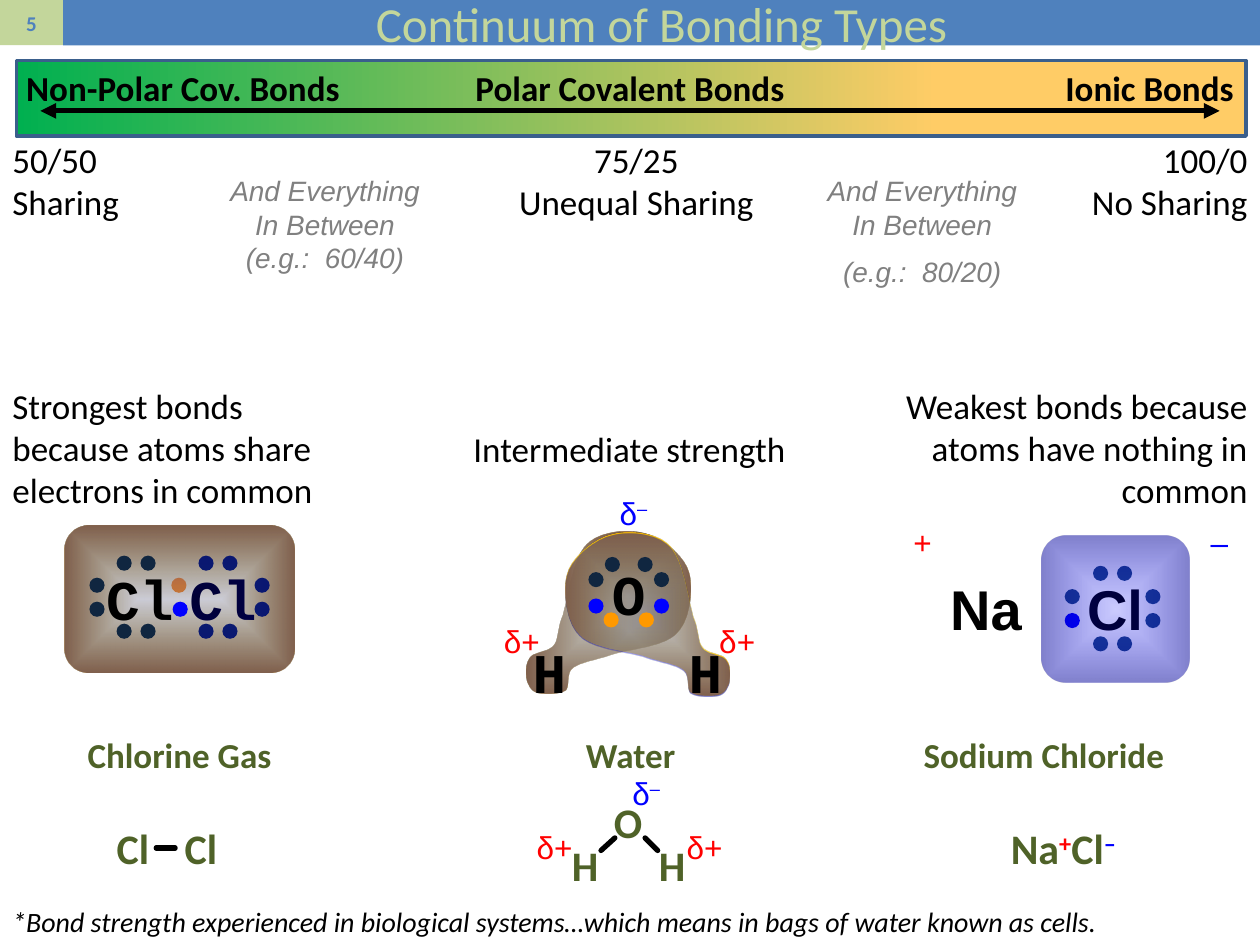
from lxml import etree
from pptx import Presentation
from pptx.dml.color import RGBColor
from pptx.enum.shapes import MSO_CONNECTOR, MSO_SHAPE
from pptx.enum.text import MSO_ANCHOR, MSO_AUTO_SIZE, PP_ALIGN
from pptx.oxml.ns import qn
from pptx.util import Inches, Pt

LEFT, CENTER, RIGHT = PP_ALIGN.LEFT, PP_ALIGN.CENTER, PP_ALIGN.RIGHT
MIDDLE = MSO_ANCHOR.MIDDLE
GROW = MSO_AUTO_SIZE.SHAPE_TO_FIT_TEXT
RECT, ROUNDED, OVAL = MSO_SHAPE.RECTANGLE, MSO_SHAPE.ROUNDED_RECTANGLE, MSO_SHAPE.OVAL
STRAIGHT = MSO_CONNECTOR.STRAIGHT

WIDTH, HEIGHT = 10, 7.5
HEADER_H = 0.36
DOT, PAIR_GAP = 0.12, 0.19
MIRROR_SUM = 9.97  # left x + right x of the two water lobes
CHARGE_WIDTHS = {"δ+": 0.49, "δ–": 0.43, "+": 0.35, "–": 0.34}

COLORS = {
    "black": "000000", "header": "4F81BD", "pale": "C3D69B", "border": "3A5F8C",
    "covalent": "00B050", "ionic": "FFCC66", "formula": "4F6228", "grey": "808080",
    "plus": "FF0000", "minus": "0000FF", "electron": "102640",
    "chloride": "1F497D", "shared": "FF9900",
}
# Gradient stops: position, colour, opacity (all but colour in percent)
SPECTRUM = [(0, COLORS["covalent"], 100), (75, COLORS["ionic"], 100)]
YELLOW_CLOUD = [(0, "FFFF00", 20), (100, "FFC000", 100)]
BLUE_CLOUD = [(0, "0000FF", 20), (100, "000099", 50)]

# Left half of the water cloud: bounds, a start point and Bézier segments
LOBE_CORNERS = (4.18, 4.22), (5.48, 5.51)
LOBE_START = (4.28, 5.5)
LOBE_CURVES = [
    (4.33, 5.51, 4.44, 5.51, 4.49, 5.48), (4.53, 5.45, 4.49, 5.35, 4.55, 5.3),
    (4.62, 5.25, 4.73, 5.24, 4.87, 5.19), (5.01, 5.15, 5.28, 5.13, 5.37, 5.02),
    (5.47, 4.92, 5.5, 4.67, 5.46, 4.54), (5.42, 4.41, 5.26, 4.28, 5.13, 4.24),
    (5, 4.2, 4.77, 4.21, 4.66, 4.32), (4.55, 4.42, 4.51, 4.74, 4.47, 4.88),
    (4.42, 5.01, 4.44, 5.06, 4.4, 5.12), (4.35, 5.18, 4.24, 5.17, 4.21, 5.22),
    (4.17, 5.27, 4.18, 5.37, 4.19, 5.41), (4.21, 5.46, 4.23, 5.49, 4.28, 5.5),
]


def rgb(name):
    return RGBColor.from_string(COLORS[name])


def style(font, size, color, face="Calibri", bold=False, italic=False):
    font.size, font.name, font.bold, font.italic = Pt(size), face, bold, italic
    font.color.rgb = rgb(color)


def add_label(slide, text, box, size=20, color="black", align=LEFT, wrap=True, **look):
    """Text box; each line of text is a paragraph, and \\v breaks a line."""
    label = slide.shapes.add_textbox(*map(Inches, box))
    frame = label.text_frame
    frame.word_wrap = wrap
    frame.auto_size = GROW
    frame.text = text
    for index, paragraph in enumerate(frame.paragraphs):
        paragraph.alignment = align
        style(paragraph.font, size, color, **look)
        if index:
            paragraph.space_before = Pt(size / 2)
    return frame


def add_superscript(paragraph, text):
    run = paragraph.add_run()
    run.text = text
    run._r.get_or_add_rPr().set("baseline", "30000")
    return run


def add_charge(slide, text, x, y):
    """Full or partial charge, coloured by its sign."""
    color = "plus" if text.endswith("+") else "minus"
    base, raised = ("δ", "–") if text == "δ–" else (text, "")
    frame = add_label(slide, base, (x, y, CHARGE_WIDTHS[text], 0.4), 18, color,
                      wrap=False, face="Arial")
    if raised:
        add_superscript(frame.paragraphs[0], raised)


def add_symbol(slide, text, x, y, face="Courier New", width=0.74):
    add_label(slide, text, (x, y, width, 0.63), 32, align=CENTER, face=face, bold=True)


def add_block(slide, kind, box, color=None):
    block = slide.shapes.add_shape(kind, *map(Inches, box))
    block.shadow.inherit = False
    block.line.fill.background()
    if color:
        block.fill.solid()
        block.fill.fore_color.rgb = rgb(color)
    return block


def set_gradient(shape, stops, from_center=True):
    fill = etree.Element(qn("a:gradFill"), rotWithShape="1")
    stop_list = etree.SubElement(fill, qn("a:gsLst"))
    for position, color, opacity in stops:
        stop = etree.SubElement(stop_list, qn("a:gs"), pos=str(position * 1000))
        shade = etree.SubElement(stop, qn("a:srgbClr"), val=color)
        if opacity < 100:
            etree.SubElement(shade, qn("a:alpha"), val=str(opacity * 1000))
    if from_center:
        path = etree.SubElement(fill, qn("a:path"), path="shape")
        etree.SubElement(path, qn("a:fillToRect"), dict.fromkeys("ltrb", "50000"))
    else:
        etree.SubElement(fill, qn("a:lin"), ang="0", scaled="0")
    shape._element.spPr.find(qn("a:ln")).addprevious(fill)


def add_cloud(slide, box, stops):
    set_gradient(add_block(slide, ROUNDED, box), stops)


def add_lobe(slide, stops, mirrored=False, drop=0):
    """Half of the water cloud, as a closed outline of Bézier curves."""
    def place(x, y):
        return Inches(MIRROR_SUM - x if mirrored else x), Inches(y + drop)

    first, last = (place(*corner) for corner in LOBE_CORNERS)
    builder = slide.shapes.build_freeform(*first, scale=1.0)
    builder.add_line_segments([last], close=True)
    lobe = builder.convert_to_shape()
    lobe.shadow.inherit = False
    lobe.line.fill.background()
    set_gradient(lobe, stops)

    outline = next(lobe._element.iter(qn("a:path")))
    for child in list(outline):
        outline.remove(child)
    for tag, coords in [("a:moveTo", LOBE_START)] + [("a:cubicBezTo", c) for c in LOBE_CURVES]:
        segment = etree.SubElement(outline, qn(tag))
        for point in zip(coords[::2], coords[1::2]):
            x, y = place(*point)
            etree.SubElement(segment, qn("a:pt"), x=str(x - lobe.left), y=str(y - lobe.top))
    etree.SubElement(outline, qn("a:close"))


def add_electron(slide, cx, cy, color="electron"):
    add_block(slide, OVAL, (cx - DOT / 2, cy - DOT / 2, DOT, DOT), color)


def add_octet(slide, cx, cy, rx, ry, color, shift=0, **sides):
    """Four electron pairs; sides recolours a side's (upper, lower) dots, None skips.

    shift moves the upper and lower pairs sideways.
    """
    half_gap = PAIR_GAP / 2
    for side, sign in (("left", -1), ("right", 1)):
        for offset, dot_color in zip((-half_gap, half_gap), sides.get(side, (color, color))):
            if dot_color:
                add_electron(slide, cx + sign * rx, cy + offset, dot_color)
            add_electron(slide, cx + shift + offset, cy + sign * ry, color)


def add_line(slide, start, end, arrows=False):
    line = slide.shapes.add_connector(STRAIGHT, *map(Inches, start + end))
    line.line.color.rgb = rgb("black")
    line.line.width = Pt(3)
    stroke = line.line._get_or_add_ln()
    if arrows:
        for tip in ("a:headEnd", "a:tailEnd"):
            etree.SubElement(stroke, qn(tip), type="triangle")
    else:
        stroke.set("cap", "rnd")
    etree.SubElement(line._element.spPr, qn("a:effectLst"))


def add_header(slide):
    number = add_block(slide, RECT, (0, 0, 0.5, HEADER_H), "pale").text_frame
    title = slide.shapes.title
    title.left, title.top, title.width, title.height = map(Inches, (0.5, 0, 9.5, HEADER_H))
    title.fill.solid()
    title.fill.fore_color.rgb = rgb("header")
    for frame, text, size, color, bold in (
            (number, "5", 12, "header", True),
            (title.text_frame, "Continuum of Bonding Types", 28, "pale", False)):
        frame.text = text
        frame.vertical_anchor = MIDDLE
        frame.paragraphs[0].alignment = CENTER
        style(frame.paragraphs[0].font, size, color, bold=bold)


def add_spectrum(slide):
    bar = add_block(slide, RECT, (0.13, 0.48, 9.76, 0.6))
    set_gradient(bar, SPECTRUM, from_center=False)
    bar.line.color.rgb = rgb("border")
    bar.line.width = Pt(2)
    for text, x, width, align in (("Non-Polar Cov. Bonds", 0.11, 2.73, LEFT),
                                  ("Polar Covalent Bonds", 3.55, 2.9, CENTER),
                                  ("Ionic Bonds", 6.99, 2.9, RIGHT)):
        add_label(slide, text, (x, 0.48, width, 0.44), align=align, bold=True)
    add_line(slide, (0.32, 0.88), (9.68, 0.88), arrows=True)


def add_descriptions(slide):
    for text, box, align in (
            ("50/50 Sharing", (0, 1.05, 1.56, 0.77), LEFT),
            ("75/25\vUnequal Sharing", (3.34, 1.05, 3.42, 0.77), CENTER),
            ("100/0\vNo Sharing", (8.54, 1.05, 1.46, 0.77), RIGHT),
            ("Strongest bonds because atoms share electrons in common", (0, 3, 2.95, 1.11), LEFT),
            ("Intermediate strength", (3.52, 3.34, 2.95, 0.44), CENTER),
            ("Weakest bonds because atoms have nothing in common", (7.05, 3, 2.95, 1.11), RIGHT)):
        add_label(slide, text, box, align=align)
    for text, x, height in (("And Everything In Between (e.g.:  60/40)", 1.71, 0.9),
                            ("And Everything In Between\n(e.g.:  80/20)", 6.45, 1.04)):
        add_label(slide, text, (x, 1.33, 1.74, height), 16, "grey", CENTER,
                  face="Arial", italic=True)
    add_label(slide, "*Bond strength experienced in biological systems…which means "
              "in bags of water known as cells.", (0, 7.13, WIDTH, 0.37), 16, italic=True)


def add_chlorine(slide):
    cloud = (0.51, 4.17, 1.83, 1.17)
    for stops, x, cx, sides in ((YELLOW_CLOUD, 1.4, 1.75, {"left": ("shared", None)}),
                                (BLUE_CLOUD, 0.74, 1.1, {"right": (None, "minus")})):
        add_cloud(slide, cloud, stops)
        add_symbol(slide, "Cl", x, 4.43)
        add_octet(slide, cx, 4.74, 0.33, 0.27, "electron", shift=-0.02, **sides)


def add_water(slide):
    for stops, mirrored, drop in ((YELLOW_CLOUD, False, 0), (BLUE_CLOUD, False, 0),
                                  (YELLOW_CLOUD, True, 0.01), (BLUE_CLOUD, True, 0.02)):
        add_lobe(slide, stops, mirrored, drop)
    for text, x, y in (("H", 3.99, 5.01), ("H", 5.23, 5.01), ("O", 4.62, 4.39)):
        add_symbol(slide, text, x, y)
    for dx, y, color in ((0.26, 4.6, "electron"), (0.13, 4.48, "electron"),
                         (0.26, 4.81, "minus"), (0.14, 4.92, "shared")):
        for sign in (-1, 1):
            add_electron(slide, 4.99 + sign * dx, y, color)
    for text, x, y in (("δ–", 4.82, 3.87), ("δ+", 3.9, 4.89), ("δ+", 5.61, 4.89)):
        add_charge(slide, text, x, y)


def add_sodium_chloride(slide):
    add_symbol(slide, "Na", 7.38, 4.51, "Arial", 0.89)
    add_symbol(slide, "Cl", 8.48, 4.51, "Arial")
    add_octet(slide, 8.83, 4.83, 0.32, 0.28, "chloride", left=("chloride", "minus"))
    add_charge(slide, "–", 9.51, 4.1)
    add_charge(slide, "+", 7.15, 4.1)
    add_cloud(slide, (8.27, 4.25, 1.17, 1.17), BLUE_CLOUD)


def add_formulas(slide):
    look = {"color": "formula", "align": CENTER, "bold": True}
    for text, x in (("Chlorine Gas", 0.29), ("Water", 3.87), ("Sodium Chloride", 7.15)):
        add_label(slide, text, (x, 5.77, 2.27, 0.44), **look)
    for text, x, y, width in (("Cl", 0.71, 6.48, 0.69), ("Cl", 1.25, 6.48, 0.69),
                              ("O", 4.72, 6.27, 0.53), ("H", 4.38, 6.61, 0.53),
                              ("H", 5.07, 6.61, 0.53)):
        add_label(slide, text, (x, y, width, 0.5), 24, **look)
    for start, end in (((1.24, 6.73), (1.39, 6.73)), ((4.77, 6.75), (4.88, 6.65)),
                       ((5.12, 6.65), (5.22, 6.75))):
        add_line(slide, start, end)
    for text, x, y in (("δ–", 4.92, 6.09), ("δ+", 4.16, 6.52), ("δ+", 5.35, 6.52)):
        add_charge(slide, text, x, y)
    # Ionic formula with raised charges
    salt = add_label(slide, "Na", (7.24, 6.48, 2.4, 0.5), 24, **look).paragraphs[0]
    add_superscript(salt, "+").font.color.rgb = rgb("plus")
    salt.add_run().text = "Cl"
    add_superscript(salt, "–").font.color.rgb = rgb("minus")


def main():
    deck = Presentation()
    deck.slide_width, deck.slide_height = Inches(WIDTH), Inches(HEIGHT)
    slide = deck.slides.add_slide(deck.slide_layouts[5])
    for add_part in (add_header, add_spectrum, add_descriptions, add_chlorine,
                     add_water, add_sodium_chloride, add_formulas):
        add_part(slide)
    deck.save("out.pptx")


if __name__ == "__main__":
    main()
